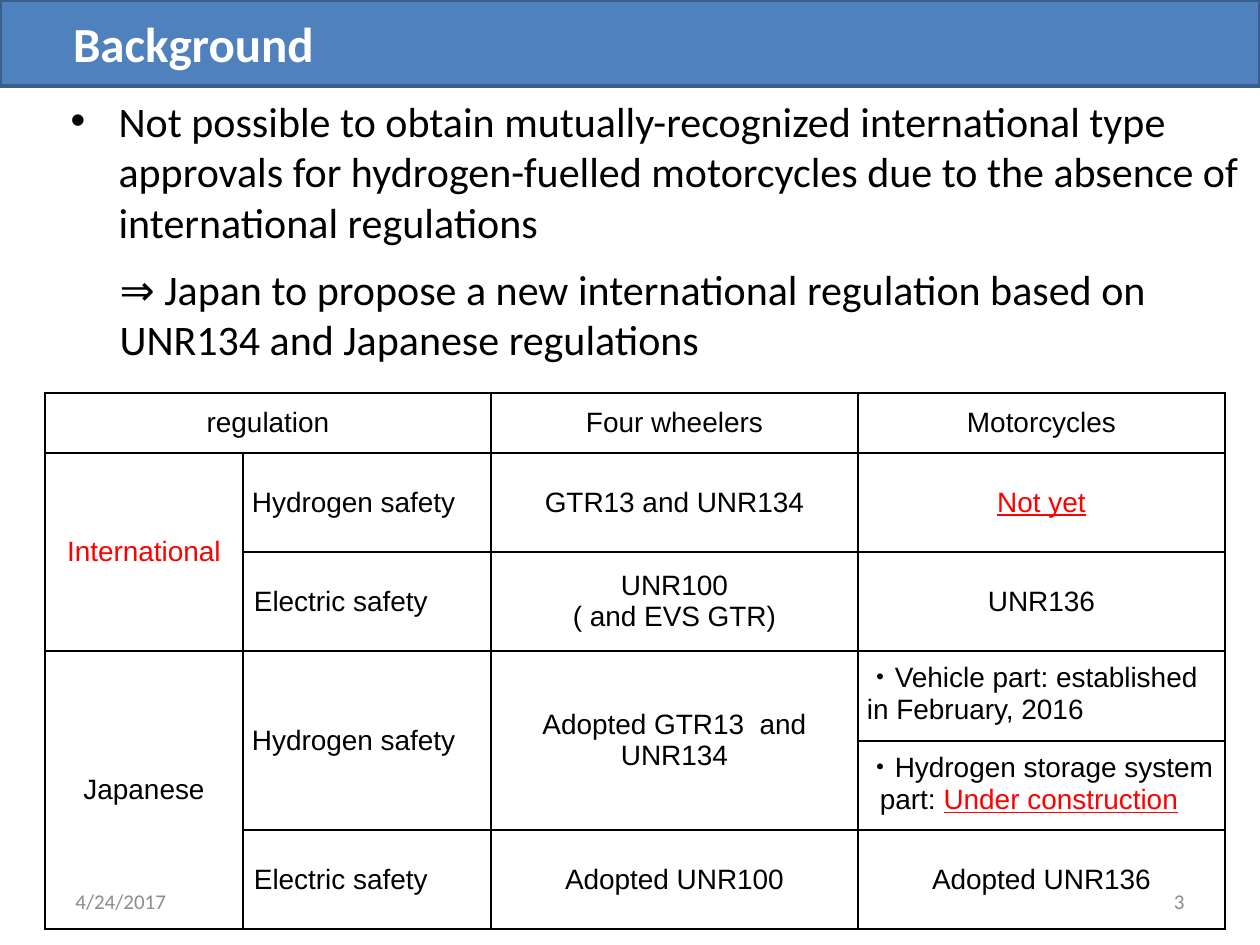
import pptx
import pptx.util
import pptx.dml.color
import pptx.enum.text
import pptx.oxml
import pptx.oxml.ns

# Content
HEAD = "Background"
BODY = [
    ("Not possible to obtain mutually-recognized international type approvals "
     "for hydrogen-fuelled motorcycles due to the absence of international "
     "regulations", dict(pad=48, hang=-48)),
    ("⇒ Japan to propose a new international regulation based on UNR134 and "
     "Japanese regulations", dict(pad=49, hang=0, above=9.5, plain=True)),
]
FOOT = [("4/24/2017", 63, "left"), ("3", 903, "right")]
COLS = [198, 248, 367, 367]
ROWS = [60, 99, 99, 90, 79, 99]
SIDE = dict(align="left")
ELEC = dict(align="just", pad=2)
NOTE = dict(align="left", line=17)
RED = dict(color="red")
MARK = dict(color="red", under=True)
# row, column, row span, column span, paragraphs of runs, format
CELLS = [
    (0, 0, 1, 2, ["regulation"], {}),
    (0, 2, 1, 1, ["Four wheelers"], {}),
    (0, 3, 1, 1, ["Motorcycles"], {}),
    (1, 0, 2, 1, ["International"], RED),
    (1, 1, 1, 1, ["Hydrogen safety"], SIDE),
    (1, 2, 1, 1, ["GTR13 and UNR134"], {}),
    (1, 3, 1, 1, ["Not yet"], MARK),
    (2, 1, 1, 1, ["Electric safety"], ELEC),
    (2, 2, 1, 1, ["UNR100", "( and EVS GTR)"], {}),
    (2, 3, 1, 1, ["UNR136"], {}),
    (3, 0, 3, 1, ["Japanese"], {}),
    (3, 1, 2, 1, ["Hydrogen safety"], SIDE),
    (3, 2, 2, 1, ["Adopted GTR13  and UNR134"], {}),
    (3, 3, 1, 1, ["・Vehicle part: established in February, 2016"], NOTE),
    (4, 3, 1, 1, [["・Hydrogen storage system part: ",
                   ("Under construction", MARK)]],
     dict(NOTE, pad=13, hang=-13)),
    (5, 1, 1, 1, ["Electric safety"], ELEC),
    (5, 2, 1, 1, ["Adopted UNR100"], {}),
    (5, 3, 1, 1, ["Adopted UNR136"], {}),
]
HUES = dict(blue="4F81BD", edge="3A5F8C", white="FFFFFF", black="000000",
            red="FF0000", gray="8C8C8C")
ALIGN = pptx.enum.text.PP_ALIGN
SIDES = dict(left=ALIGN.LEFT, center=ALIGN.CENTER, right=ALIGN.RIGHT,
             just=ALIGN.JUSTIFY)
MID = pptx.enum.text.MSO_ANCHOR.MIDDLE
Pt = pptx.util.Pt


def px(n):
    return round(n * 914400 / 126)


def hue(name):
    return pptx.dml.color.RGBColor.from_string(HUES[name])


def place(shape, *box):
    shape.left, shape.top, shape.width, shape.height = map(px, box)


def write(frame, runs, first=True, size=16, font="Arial", color="black",
          bold=False, under=False, align="left", pad=0, hang=0, above=0,
          line=None, plain=False):
    """Write one paragraph; a run is a string or (string, own format)."""
    para = frame.paragraphs[0] if first else frame.add_paragraph()
    para.alignment = SIDES[align]
    para.space_before = Pt(above)
    if line:
        para.line_spacing = Pt(line)
    props = para._p.get_or_add_pPr()
    props.set("marL", str(px(pad)))
    props.set("indent", str(px(hang)))
    if plain:
        props.append(pptx.oxml.parse_xml(
            "<a:buNone %s/>" % pptx.oxml.ns.nsdecls("a")))
    for part in [runs] if isinstance(runs, str) else runs:
        words, own = (part, {}) if isinstance(part, str) else part
        run = para.add_run()
        run.text = words
        run.font.size, run.font.name, run.font.bold = Pt(size), font, bold
        run.font.underline = own.get("under", under)
        run.font.color.rgb = hue(own.get("color", color))


def rule(cell):
    """Thin black border on all four sides."""
    props = cell._tc.get_or_add_tcPr()
    for spot, side in enumerate("LRTB"):
        props.insert(spot, pptx.oxml.parse_xml(
            '<a:ln%s %s w="12700"><a:solidFill><a:srgbClr val="%s"/>'
            '</a:solidFill></a:ln%s>'
            % (side, pptx.oxml.ns.nsdecls("a"), HUES["black"], side)))


deck = pptx.Presentation()
deck.slide_width, deck.slide_height = px(1260), px(945)
slide = deck.slides.add_slide(deck.slide_layouts[1])
title, body = slide.placeholders

# Title band
place(title, 0, 0, 1260, 86)
title.fill.solid()
title.fill.fore_color.rgb = hue("blue")
title.line.color.rgb = hue("edge")
title.line.width = Pt(2)
title.text_frame.vertical_anchor = MID
title.text_frame.margin_left = px(73)
write(title.text_frame, HEAD, size=28, font="Calibri", color="white",
      bold=True)

# Body list
place(body, 58, 89, 1201, 285)
body.text_frame.auto_size = pptx.enum.text.MSO_AUTO_SIZE.NONE
for n, (words, form) in enumerate(BODY):
    write(body.text_frame, words, first=n == 0, size=24, font="Calibri",
          **form)

# Table
table = slide.shapes.add_table(len(ROWS), len(COLS), px(45), px(393),
                               px(sum(COLS)), px(sum(ROWS))).table
table.first_row = table.horz_banding = False
for col, wide in zip(table.columns, COLS):
    col.width = px(wide)
for row, high in zip(table.rows, ROWS):
    row.height = px(high)
for cell in table.iter_cells():
    cell.fill.background()
    rule(cell)
    cell.vertical_anchor = MID
    cell.margin_left = cell.margin_right = px(9)
    cell.margin_top = cell.margin_bottom = 0
for r, c, down, over, paras, form in CELLS:
    cell = table.cell(r, c)
    if down * over > 1:
        cell.merge(table.cell(r + down - 1, c + over - 1))
    for n, runs in enumerate(paras):
        write(cell.text_frame, runs, first=n == 0,
              **{"align": "center", **form})

# Date and page number
for words, left, align in FOOT:
    box = slide.shapes.add_textbox(px(left), px(876), px(294), px(50))
    box.text_frame.word_wrap = True
    box.text_frame.vertical_anchor = MID
    write(box.text_frame, words, size=12, font="Calibri", color="gray",
          align=align)

deck.save("out.pptx")
